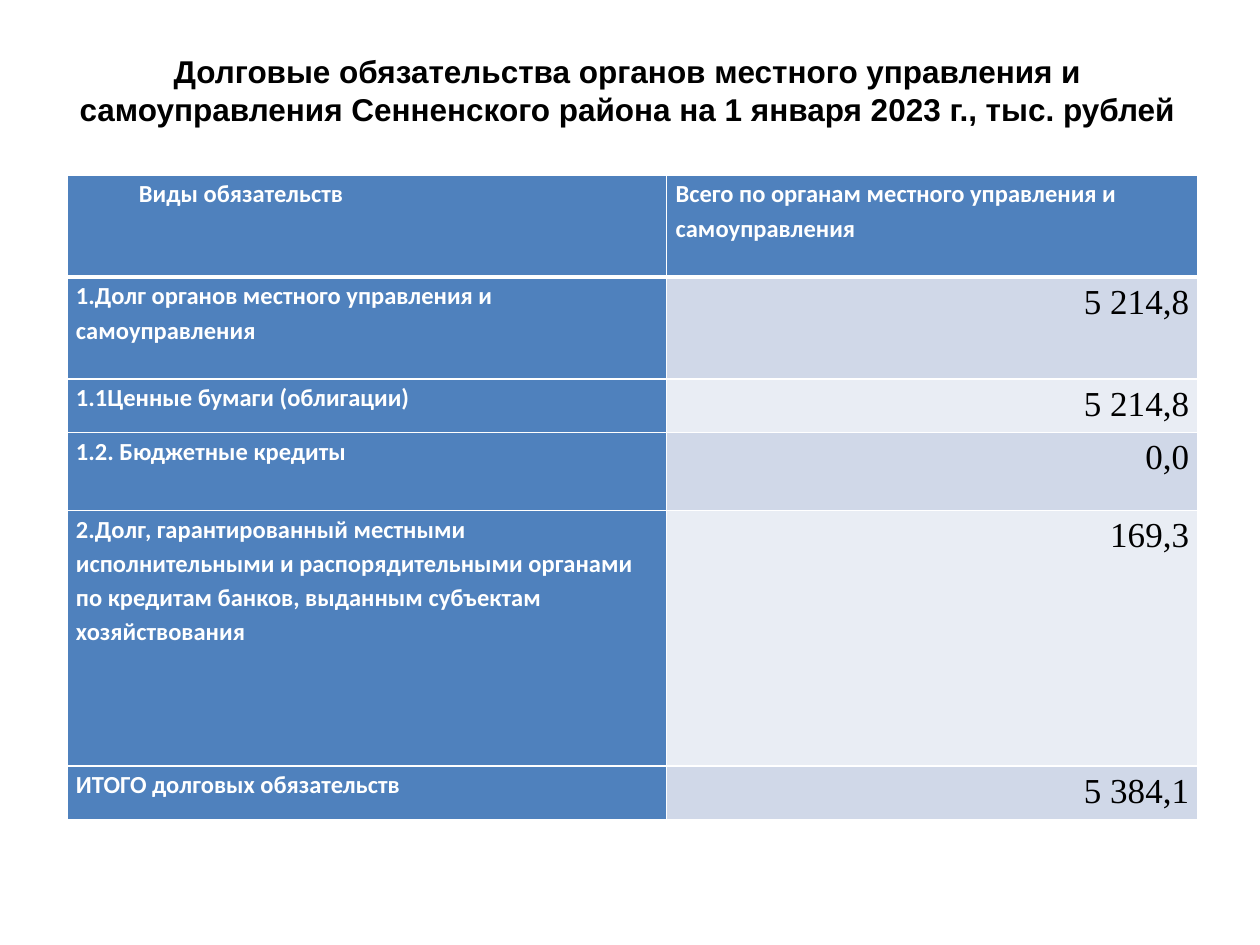
from dataclasses import dataclass

from lxml.etree import SubElement
from pptx import Presentation
from pptx.dml.color import RGBColor
from pptx.enum.text import MSO_ANCHOR, MSO_AUTO_SIZE, PP_ALIGN
from pptx.oxml.ns import qn
from pptx.util import Pt

WHITE, BLACK, BLUE = "FFFFFF", "000000", "4F81BD"
BANDS = ("D0D8E8", "E9EDF4")


@dataclass(frozen=True)
class TextStyle:
    font: str
    size: float
    color: str
    bold: bool
    align: PP_ALIGN


@dataclass(frozen=True)
class DebtRow:
    kind: str
    total: str
    height: float


TITLE = TextStyle("Arial", 18, BLACK, True, PP_ALIGN.CENTER)
LABEL = TextStyle("Calibri", 14, WHITE, True, PP_ALIGN.LEFT)
AMOUNT = TextStyle("Times New Roman", 20, BLACK, False, PP_ALIGN.RIGHT)

HEADER = DebtRow("Виды обязательств",
                 "Всего по органам местного управления и самоуправления", 58.3)
DEBTS = [
    DebtRow("1.Долг органов местного управления и самоуправления", "5 214,8", 58.3),
    DebtRow("1.1Ценные бумаги (облигации)", "5 214,8", 30.4),
    DebtRow("1.2. Бюджетные кредиты", "0,0", 44.6),
    DebtRow("2.Долг, гарантированный местными исполнительными и распорядительными "
            "органами по кредитам банков, выданным субъектам хозяйствования",
            "169,3", 146.2),
    DebtRow("ИТОГО долговых обязательств", "5 384,1", 30.4),
]
COLUMN_WIDTHS = (342.7, 303.8)


def rgb(color: str) -> RGBColor:
    return RGBColor.from_string(color)


def set_attributes(target, values: dict) -> None:
    for name, value in values.items():
        setattr(target, name, value)


def write_text(frame, text: str, style: TextStyle, spacing: float = 1.0):
    paragraph = frame.paragraphs[0]
    set_attributes(paragraph, {"alignment": style.align, "line_spacing": spacing})
    run = paragraph.add_run()
    run.text = text
    set_attributes(run.font, {"name": style.font, "size": Pt(style.size),
                              "bold": style.bold})
    run.font.color.rgb = rgb(style.color)
    return paragraph


def draw_borders(cell, top: float, bottom: float) -> None:
    properties = cell._tc.get_or_add_tcPr()
    for side, width in {"L": 1, "R": 1, "T": top, "B": bottom}.items():
        line = SubElement(properties, qn(f"a:ln{side}"), w=str(Pt(width)))
        fill = SubElement(line, qn("a:solidFill"))
        SubElement(fill, qn("a:srgbClr"), val=WHITE)


def fill_cell(cell, text: str, style: TextStyle, fill: str, row: int):
    draw_borders(cell, top=3 if row == 1 else 1, bottom=3 if row == 0 else 1)
    set_attributes(cell, {"margin_left": Pt(5.2), "margin_right": Pt(5.2),
                          "margin_top": 0, "margin_bottom": 0,
                          "vertical_anchor": MSO_ANCHOR.TOP})
    cell.fill.solid()
    cell.fill.fore_color.rgb = rgb(fill)
    return write_text(cell.text_frame, text, style, 1.15)


def add_debt_table(slide) -> None:
    rows = [HEADER, *DEBTS]
    table = slide.shapes.add_table(
        len(rows), len(COLUMN_WIDTHS), Pt(38.2), Pt(100.1),
        Pt(sum(COLUMN_WIDTHS)), Pt(sum(row.height for row in rows))).table
    for column, width in zip(table.columns, COLUMN_WIDTHS):
        column.width = Pt(width)
    for index, row in enumerate(rows):
        table.rows[index].height = Pt(row.height)
        is_header = index == 0
        kind = fill_cell(table.cell(index, 0), row.kind, LABEL, BLUE, index)
        if is_header:
            kind._p.get_or_add_pPr().set("marL", str(Pt(36)))
        fill_cell(table.cell(index, 1), row.total, LABEL if is_header else AMOUNT,
                  BLUE if is_header else BANDS[(index - 1) % 2], index)


def add_title(slide) -> None:
    title = slide.shapes.title
    set_attributes(title, {"left": Pt(32.4), "top": Pt(25.9),
                           "width": Pt(652.3), "height": Pt(51.1)})
    set_attributes(title.text_frame, {"word_wrap": True,
                                      "auto_size": MSO_AUTO_SIZE.SHAPE_TO_FIT_TEXT,
                                      "vertical_anchor": MSO_ANCHOR.MIDDLE})
    write_text(title.text_frame,
               "Долговые обязательства органов местного управления и самоуправления "
               "Сенненского района на 1 января 2023 г., тыс. рублей", TITLE)


def main() -> None:
    presentation = Presentation()
    set_attributes(presentation, {"slide_width": Pt(720), "slide_height": Pt(540)})
    # "Title Only" layout
    slide = presentation.slides.add_slide(presentation.slide_layouts[5])
    add_title(slide)
    add_debt_table(slide)
    presentation.save("out.pptx")


if __name__ == "__main__":
    main()
